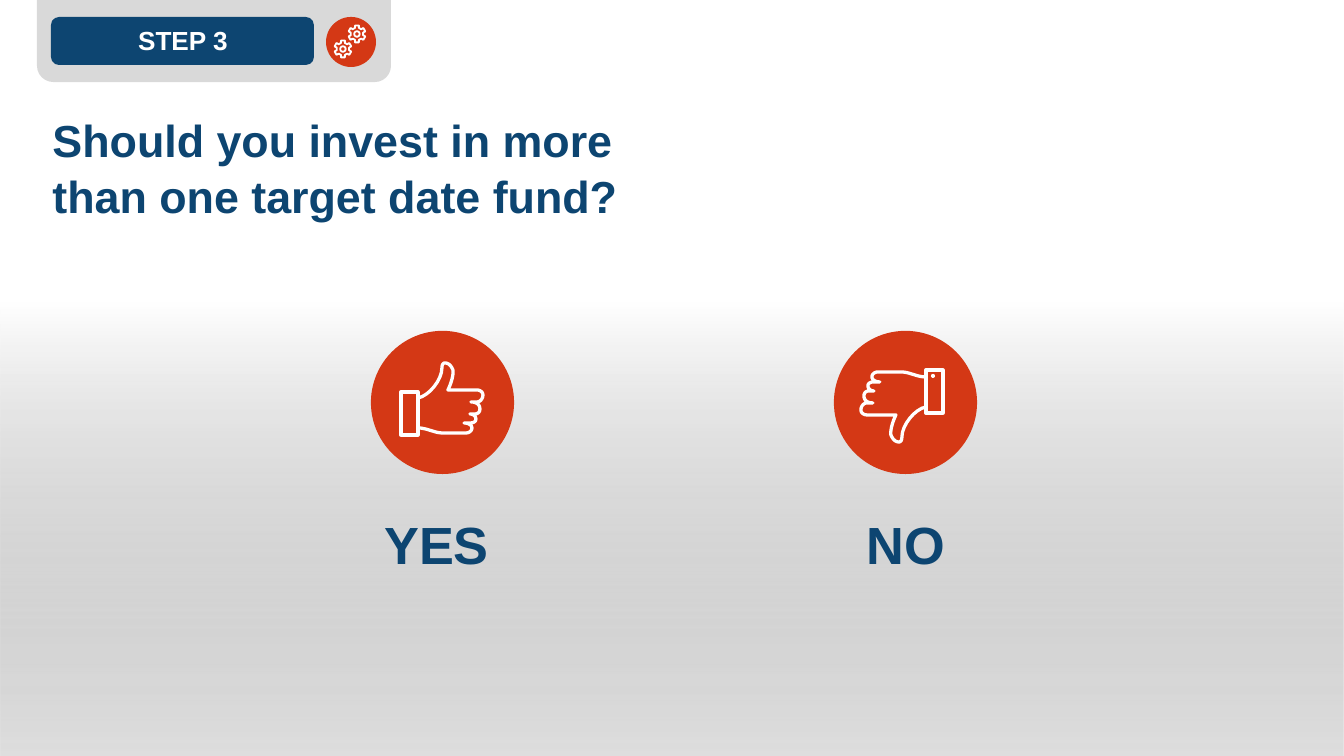
from math import cos, radians, sin

from lxml.etree import SubElement
from pptx import Presentation
from pptx.dml.color import RGBColor
from pptx.enum.shapes import MSO_SHAPE
from pptx.enum.text import MSO_ANCHOR, MSO_AUTO_SIZE, PP_ALIGN
from pptx.oxml.ns import qn
from pptx.util import Pt

PX = 914400 / 134.4
COLORS = {"navy": "0D4571", "red": "D43815", "panel": "D9D9D9",
          "shade": "808080", "white": "FFFFFF"}
FONT = "Arial"
CIRCLE = 139

# Each step is a line (one point) or a cubic curve (three points).
THUMB = [
    [(45, 65)],
    [(56, 63), (69, 47), (69, 35)],
    [(69, 32), (70, 30), (72, 30)],
    [(75, 30), (78, 32), (80, 37)],
    [(81, 43), (77, 53), (75, 57)],
    [(104, 57)],
    [(107, 57), (110, 59), (110, 62)],
    [(110, 66), (107, 69), (104, 69)],
    [(98, 69)],
    [(104, 69), (107, 72), (107, 76)],
    [(107, 79), (105, 81), (102, 81)],
    [(97, 81)],
    [(101, 81), (103, 84), (103, 86)],
    [(103, 89), (100, 90), (97, 90)],
    [(91, 90)],
    [(95, 90), (99, 92), (99, 95)],
    [(99, 98), (96, 100), (93, 100)],
    [(70, 100)],
    [(64, 100), (60, 98), (56, 97)],
    [(53, 96), (49, 95), (45, 95)],
]
CUFF = [(28, 59), (45, 59), (45, 102), (28, 102)]


def px(value):
    return round(value * PX)


def rgb(name):
    return RGBColor.from_string(COLORS[name])


def add_preset(shapes, kind, box, color):
    shape = shapes.add_shape(kind, *map(px, box))
    shape.shadow.inherit = False
    shape.fill.solid()
    shape.fill.fore_color.rgb = rgb(color)
    shape.line.fill.background()
    return shape


def add_outline(shapes, points, width):
    """Draw a closed white line through points given in px."""
    corners = [(px(x), px(y)) for x, y in points]
    builder = shapes.build_freeform(*corners[0])
    builder.add_line_segments(corners[1:], close=True)
    shape = builder.convert_to_shape()
    shape.shadow.inherit = False
    shape.fill.background()
    shape.line.color.rgb = rgb("white")
    shape.line.width = Pt(width)


def trace(steps, pieces=8):
    """Turn lines and cubic curves into a list of points."""
    points = []
    for step in steps:
        if len(step) == 1:
            points += step
            continue
        controls = [points[-1], *step]
        for piece in range(1, pieces + 1):
            t = piece / pieces
            weights = ((1 - t) ** 3, 3 * t * (1 - t) ** 2, 3 * t * t * (1 - t), t ** 3)
            points.append(tuple(sum(weight * control[axis] for weight, control
                                    in zip(weights, controls)) for axis in (0, 1)))
    return points


def write_text(shape, text, size, color="navy", align=PP_ALIGN.CENTER, spacing=1.05):
    frame = shape.text_frame
    frame.word_wrap = True
    frame.auto_size = MSO_AUTO_SIZE.SHAPE_TO_FIT_TEXT
    frame.vertical_anchor = MSO_ANCHOR.TOP
    paragraph = frame.paragraphs[0]
    paragraph.text = text
    paragraph.alignment = align
    paragraph.line_spacing = spacing
    paragraph.space_before = Pt(0)
    for run in paragraph.runs:
        run.font.name = FONT
        run.font.size = Pt(size)
        run.font.bold = True
        run.font.color.rgb = rgb(color)


def add_backdrop(shapes, box):
    shape = add_preset(shapes, MSO_SHAPE.RECTANGLE, box, "white")
    shape.fill.gradient()
    shape.fill.gradient_angle = 90
    for stop, color, position in zip(shape.fill.gradient_stops, ("shade", "white"), (0, 0.6)):
        stop.color.rgb = rgb(color)
        stop.position = position
    shade = next(shape.element.iter(qn("a:srgbClr")))
    SubElement(shade, qn("a:alpha"), val="25000")


def add_title(slide, box):
    title = slide.shapes.title
    title.left, title.top, title.width, title.height = map(px, box)
    write_text(title, "Should you invest in more\vthan one target date fund?", 24,
               align=PP_ALIGN.LEFT)


def add_gear(shapes, x, y):
    def ring(angles_and_radii):
        return [(x + radius * cos(radians(angle)), y + radius * sin(radians(angle)))
                for angle, radius in angles_and_radii]

    tooth = [(-18, 6.3), (-13, 8.7), (13, 8.7), (18, 6.3)]
    add_outline(shapes, ring((base + angle, radius) for base in range(-90, 270, 60)
                             for angle, radius in tooth), 1)
    add_outline(shapes, ring((angle, 2.7) for angle in range(0, 360, 20)), 1)


def add_step_tab(slide, box):
    left, top, width, height = box
    shapes = slide.shapes.add_group_shape().shapes
    panel = add_preset(shapes, MSO_SHAPE.ROUND_2_SAME_RECTANGLE, box, "panel")
    panel.rotation = 180
    panel.adjustments[0] = 0.198
    add_preset(shapes, MSO_SHAPE.ROUNDED_RECTANGLE, (left + 14, top + 17, 263, 48), "navy")
    label = shapes.add_textbox(*map(px, (left + 13, top + 24, 266, 40)))
    write_text(label, "STEP 3", 14, color="white", spacing=0.8)
    add_preset(shapes, MSO_SHAPE.OVAL, (left + 289, top + 17, 50, 50), "red")
    for x, y in ((320, 34), (306, 49)):
        add_gear(shapes, left + x, top + y)


def add_answer(slide, box, text, label_box, thumb_up):
    """Place a thumb in a circle, with its word below."""
    left, top, size, _ = box
    label_left, label_top, label_width, label_height = label_box
    label = slide.shapes.add_textbox(*map(px, (left + label_left, top + label_top,
                                              label_width, label_height)))
    write_text(label, text, 28)
    shapes = slide.shapes.add_group_shape().shapes
    circle = add_preset(shapes, MSO_SHAPE.OVAL, box, "red")
    circle.line.color.rgb = rgb("red")
    circle.line.width = Pt(2.25)

    def place(x, y):
        if thumb_up:
            return left + x, top + y
        return left + size - 4 - x, top + size - y

    for points in (trace(THUMB), CUFF):
        add_outline(shapes, [place(x, y) for x, y in points], 1.75)
    if not thumb_up:
        add_preset(shapes, MSO_SHAPE.OVAL, (left + 95, top + 41, 4, 4), "white")


def main():
    presentation = Presentation()
    presentation.slide_width, presentation.slide_height = px(1344), px(756)
    slide = presentation.slides.add_slide(presentation.slide_layouts[5])
    add_backdrop(slide.shapes, (0, 0, 1344, 756))
    add_answer(slide, (836, 333, CIRCLE, CIRCLE), "NO", (-81, 170, 301, 77), False)
    add_answer(slide, (373, 333, CIRCLE, CIRCLE), "YES", (-93, 170, 313, 77), True)
    add_title(slide, (39, 103, 1130, 122))
    # The title placeholder comes first in the tree; bring it above the backdrop.
    slide.shapes.element.append(slide.shapes.title.element)
    add_step_tab(slide, (37, 0, 354, 82))
    presentation.save("out.pptx")


if __name__ == "__main__":
    main()
